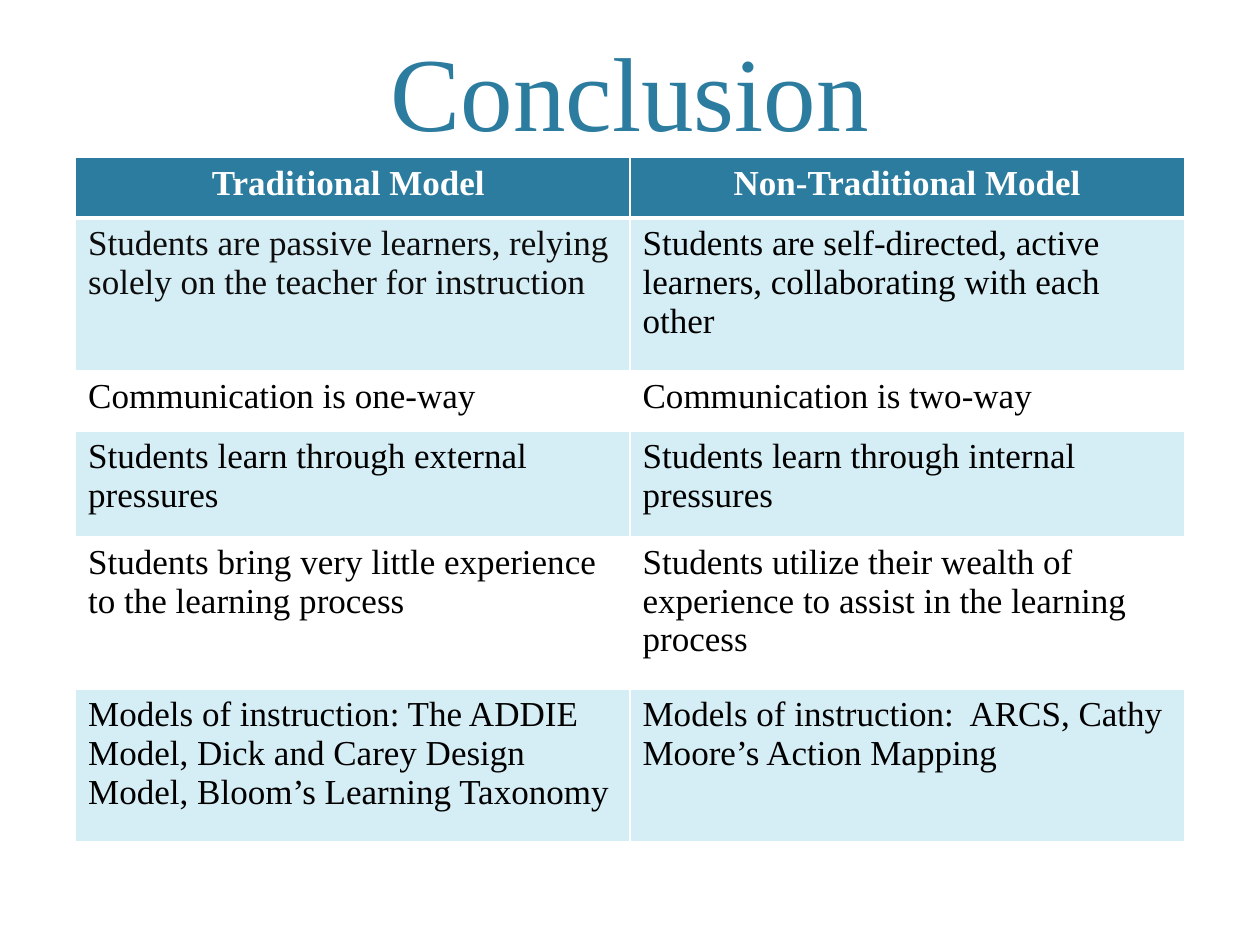
import pptx
import pptx.util
import pptx.dml.color
import pptx.enum.text
import pptx.oxml
import pptx.oxml.ns

RGB = pptx.dml.color.RGBColor
TEAL = RGB(0x2C, 0x7C, 0x9F)
PALE = RGB(0xD5, 0xED, 0xF4)
WHITE = RGB(0xFF, 0xFF, 0xFF)
BLACK = RGB(0, 0, 0)
DARK = RGB(0x0D, 0x0D, 0x0D)
ALIGN = pptx.enum.text.PP_ALIGN
ANCHOR = pptx.enum.text.MSO_ANCHOR
FIT = pptx.enum.text.MSO_AUTO_SIZE

WIDE, HIGH = 10, 7.5
LEFT, SPAN = 0.06 * WIDE, 0.88 * WIDE
TALLS = [0.48, 1.21, 0.48, 0.84, 1.21, 1.21]
ROWS = [
    ("Traditional Model ", "Non-Traditional Model"),
    ("Students are passive learners, relying solely on the teacher for instruction",
     "Students are self-directed, active learners, collaborating with each other"),
    ("Communication is one-way", "Communication is two-way"),
    ("Students learn through external pressures",
     "Students learn through internal pressures"),
    ("Students bring very little experience to the learning process",
     "Students utilize their wealth of experience to assist in the learning process"),
    ("Models of instruction: The ADDIE Model, Dick and Carey Design Model, "
     "Bloom’s Learning Taxonomy",
     "Models of instruction:  ARCS, Cathy Moore’s Action Mapping"),
]


def apply(item, form):
    """Set each attribute named in form on item."""
    for name, value in form.items():
        setattr(item, name, value)


def write(frame, text, size, color, align, bold=False):
    """Put one formatted paragraph into a text frame."""
    para = frame.paragraphs[0]
    para.alignment = align
    run = para.add_run()
    run.text = text
    apply(run.font, {"name": "Times New Roman", "size": pptx.util.Pt(size),
                     "bold": bold})
    run.font.color.rgb = color


def edge(cell, side, width):
    """Draw a white border on one side of a cell."""
    line = pptx.oxml.parse_xml(
        f'<a:{side} {pptx.oxml.ns.nsdecls("a")} w="{pptx.util.Pt(width)}">'
        f'<a:solidFill><a:srgbClr val="{WHITE}"/></a:solidFill></a:{side}>')
    cell._tc.get_or_add_tcPr().append(line)


def head(slide):
    """Place and fill the title."""
    title = slide.shapes.title
    apply(title, {"left": pptx.util.Inches(LEFT), "top": pptx.util.Inches(0.12),
                  "width": pptx.util.Inches(SPAN),
                  "height": pptx.util.Inches(1.14)})
    apply(title.text_frame, {"vertical_anchor": ANCHOR.BOTTOM,
                             "auto_size": FIT.NONE})
    write(title.text_frame, "Conclusion", 60, TEAL, ALIGN.CENTER)


def fill(cell, text, row, col):
    """Format one table cell by its row and column."""
    first = row == 0
    for side in ("lnL", "lnR", "lnT", "lnB"):
        thick = (row, side) in ((0, "lnB"), (1, "lnT"))
        edge(cell, side, 3 if thick else 1)
    cell.fill.solid()
    cell.fill.fore_color.rgb = TEAL if first else PALE if row % 2 else WHITE
    color = WHITE if first else DARK if (row, col) == (1, 0) else BLACK
    align = ALIGN.CENTER if first else ALIGN.LEFT
    write(cell.text_frame, text, 20, color, align, first)


def grid(slide):
    """Build the table that compares the two models."""
    box = [pptx.util.Inches(n) for n in (LEFT, HIGH / 6, SPAN, sum(TALLS))]
    table = slide.shapes.add_table(len(ROWS), len(ROWS[0]), *box).table
    for row, (tall, texts) in enumerate(zip(TALLS, ROWS)):
        table.rows[row].height = pptx.util.Inches(tall)
        for col, text in enumerate(texts):
            fill(table.cell(row, col), text, row, col)


def main():
    """Build and save the slide."""
    deck = pptx.Presentation()
    apply(deck, {"slide_width": pptx.util.Inches(WIDE),
                 "slide_height": pptx.util.Inches(HIGH)})
    slide = deck.slides.add_slide(deck.slide_layouts[5])
    head(slide)
    grid(slide)
    deck.save("out.pptx")


if __name__ == "__main__":
    main()
